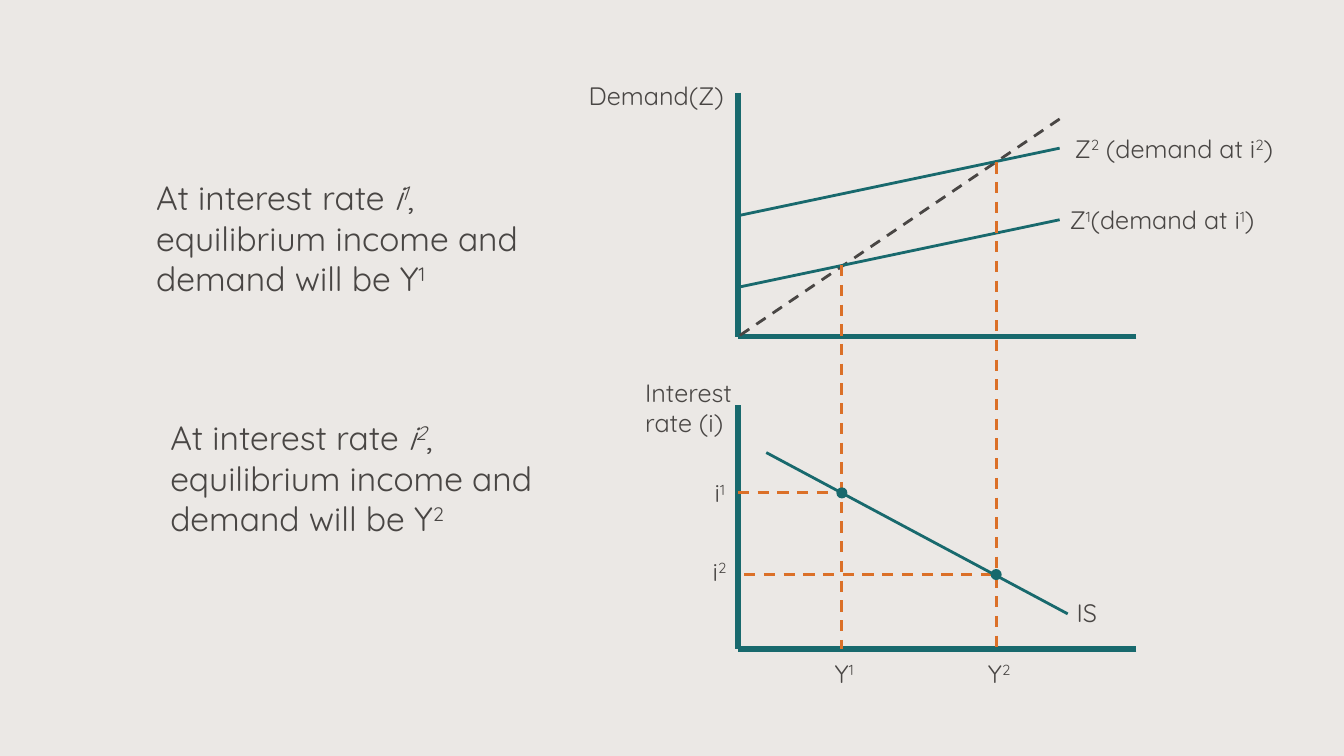
from pptx import Presentation
from pptx.dml.color import RGBColor
from pptx.enum.dml import MSO_LINE
from pptx.enum.shapes import MSO_CONNECTOR, MSO_SHAPE
from pptx.enum.text import MSO_AUTO_SIZE
from pptx.oxml.ns import qn
from pptx.util import Inches, Pt
from lxml import etree

PAPER = RGBColor(0xEB, 0xE8, 0xE5)
TEAL = RGBColor(0x18, 0x69, 0x6D)
INK = RGBColor(0x49, 0x46, 0x44)
ORANGE = RGBColor(0xDB, 0x70, 0x28)

AXIS_X, AXIS_END, CURVE_END = 7.32, 11.27, 10.51
DEMAND_BASE, RATE_BASE = 3.34, 6.44
AXIS_HEIGHT, CURVE_RISE, DOT_SIZE = 2.42, 0.67, 0.11
DEMAND_STARTS = [2.85, 2.14]
EQUILIBRIA = [
    {"income": 8.35, "demand": 2.63, "rate": 4.89, "guide_start": AXIS_X},
    {"income": 9.88, "demand": 1.61, "rate": 5.7, "guide_start": 7.38},
]
IS_CURVE = (7.6, 4.49, 10.59, 6.09)

PLAIN, RAISED, ITALIC, ITALIC_RAISED = (
    (False, False), (False, True), (True, False), (True, True))


def indexed(letter, number):
    return [(letter, PLAIN), (number, RAISED)]


def demand_label(number, gap):
    return [*indexed("Z", number), (gap + "(demand at i", PLAIN), (number, RAISED), (")", PLAIN)]


def statement(number):
    return [("At interest rate ", PLAIN), ("i", ITALIC), (number, ITALIC_RAISED),
            (", equilibrium income and demand will be Y", PLAIN), (number, RAISED)]


LABELS = [
    (10.56, 1.27, 2.5, 0.4, 18, demand_label("2", " ")),
    (10.51, 1.98, 2.23, 0.4, 18, demand_label("1", "")),
    (6.99, 4.69, 0.58, 0.4, 18, indexed("i", "1")),
    (6.97, 5.47, 0.58, 0.4, 18, indexed("i", "2")),
    (6.3, 3.69, 1.32, 0.71, 18, [("Interest rate (i)", PLAIN)]),
    (5.74, 0.75, 1.64, 0.4, 18, [("Demand(Z)", PLAIN)]),
    (1.45, 1.71, 4.15, 1.31, 24, statement("1")),
    (1.59, 4.09, 4.15, 1.31, 24, statement("2")),
    (8.18, 6.48, 0.58, 0.4, 18, indexed("Y", "1")),
    (9.7, 6.48, 0.58, 0.4, 18, indexed("Y", "2")),
    (10.58, 5.88, 0.67, 0.4, 18, [("IS", PLAIN)]),
]


def add_line(page, ends, color=TEAL, width=2, dashed=False):
    line = page.shapes.add_connector(MSO_CONNECTOR.STRAIGHT, *map(Inches, ends))
    line.line.color.rgb = color
    line.line.width = Pt(width)
    if dashed:
        line.line.dash_style = MSO_LINE.DASH
    etree.SubElement(line._element.spPr, qn("a:effectLst"))


def add_dot(page, x, y):
    corner = (x - DOT_SIZE / 2, y - DOT_SIZE / 2)
    dot = page.shapes.add_shape(
        MSO_SHAPE.OVAL, *map(Inches, (*corner, DOT_SIZE, DOT_SIZE)))
    dot.shadow.inherit = False
    dot.fill.solid()
    dot.fill.fore_color.rgb = TEAL
    dot.line.fill.background()


def add_label(page, left, top, width, height, size, spans):
    box = page.shapes.add_textbox(*map(Inches, (left, top, width, height)))
    frame = box.text_frame
    frame.word_wrap = True
    frame.auto_size = MSO_AUTO_SIZE.SHAPE_TO_FIT_TEXT
    para = frame.paragraphs[0]
    for text, (italic, raised) in spans:
        span = para.add_run()
        span.text = text
        span.font.color.rgb = INK
        for name, value in {"name": "Quicksand", "size": Pt(size), "italic": italic}.items():
            setattr(span.font, name, value)
        if raised:
            span._r.get_or_add_rPr().set("baseline", "30000")


def main():
    deck = Presentation()
    deck.slide_width, deck.slide_height = Inches(13.33), Inches(7.5)
    page = deck.slides.add_slide(deck.slide_layouts[6])
    page.background.fill.solid()
    page.background.fill.fore_color.rgb = PAPER

    for base in (DEMAND_BASE, RATE_BASE):
        add_line(page, (AXIS_X, base - AXIS_HEIGHT, AXIS_X, base), width=4)
        add_line(page, (AXIS_END, base, AXIS_X, base), width=4)
    add_line(page, (CURVE_END, 1.18, AXIS_X, DEMAND_BASE), INK, dashed=True)
    for start in DEMAND_STARTS:
        add_line(page, (AXIS_X, start, CURVE_END, start - CURVE_RISE))
    for point in EQUILIBRIA:
        income, rate = point["income"], point["rate"]
        add_line(page, (income, point["demand"], income, RATE_BASE), ORANGE, dashed=True)
        add_line(page, (point["guide_start"], rate, income, rate), ORANGE, dashed=True)
        add_dot(page, income, rate)
    add_line(page, IS_CURVE)
    for label in LABELS:
        add_label(page, *label)
    deck.save("out.pptx")


if __name__ == "__main__":
    main()
